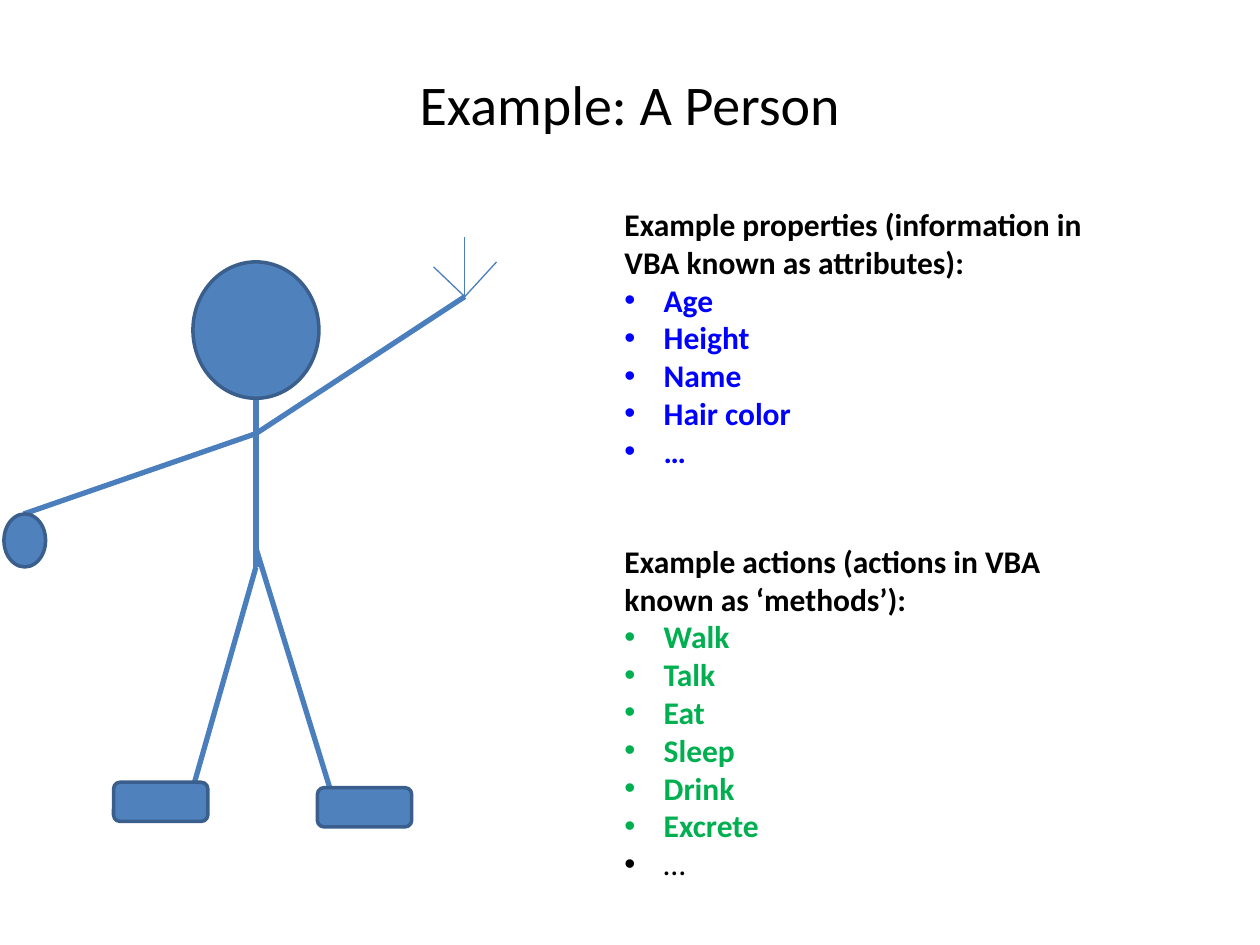
from lxml.etree import SubElement
from pptx import Presentation
from pptx.dml.color import RGBColor
from pptx.enum.shapes import MSO_CONNECTOR, MSO_SHAPE
from pptx.enum.text import MSO_ANCHOR, MSO_AUTO_SIZE, PP_ALIGN
from pptx.oxml.ns import qn
from pptx.util import Cm, Pt

BLACK = RGBColor(0x00, 0x00, 0x00)
BLUE = RGBColor(0x00, 0x00, 0xFF)
GREEN = RGBColor(0x00, 0xB0, 0x50)
SKIN = RGBColor(0x4F, 0x81, 0xBD)
EDGE = RGBColor(0x3A, 0x5F, 0x8C)
LIMB = RGBColor(0x4B, 0x7E, 0xBC)


def write(para, text, size=18, color=BLACK, bold=True, align=PP_ALIGN.LEFT, bullet=False):
    para.alignment = align
    run = para.add_run()
    run.text = text
    font = run.font
    font.name, font.size, font.bold = "Calibri", Pt(size), bold
    font.color.rgb = color
    if bullet:
        props = para._p.get_or_add_pPr()
        props.set("marL", str(Cm(0.79)))
        props.set("indent", str(-Cm(0.79)))
        SubElement(props, qn("a:buFont")).set("typeface", "Arial")
        SubElement(props, qn("a:buChar")).set("char", "•")


deck = Presentation()
deck.slide_width, deck.slide_height = Cm(25.4), Cm(19.05)
slide = deck.slides.add_slide(deck.slide_layouts[5])

title = slide.shapes.title
title.left, title.top, title.width, title.height = Cm(1.27), Cm(0.76), Cm(22.86), Cm(2.62)
title.text_frame.vertical_anchor = MSO_ANCHOR.MIDDLE
write(title.text_frame.paragraphs[0], "Example: A Person", size=32, bold=False,
      align=PP_ALIGN.CENTER)

# Stick figure: lines first, so that head, shoes and fist cover their ends
person = slide.shapes.add_group_shape()
neck, chest, hip = (5.16, 8.05), (5.16, 8.74), (5.16, 11.43)
palm, wrist = (9.37, 5.98), (0.48, 10.36)
lines = [
    (neck, hip, 3),
    (palm, chest, 3),
    (chest, wrist, 3),
    (hip, (3.89, 15.88), 3),
    ((5.16, 11.05), (6.73, 16.15), 3),
    (palm, (9.37, 4.78), 0.75),
    (palm, (10.01, 5.28), 0.75),
    (palm, (8.74, 5.38), 0.75),
]
for start, end, width in lines:
    line = person.shapes.add_connector(
        MSO_CONNECTOR.STRAIGHT, *[Cm(v) for v in start + end])
    line.line.color.rgb = LIMB
    line.line.width = Pt(width)
    SubElement(line._element.spPr, qn("a:effectLst"))

parts = [
    (MSO_SHAPE.OVAL, 3.89, 5.28, 2.54, 2.75),
    (MSO_SHAPE.ROUNDED_RECTANGLE, 2.29, 15.77, 1.9, 0.79),
    (MSO_SHAPE.ROUNDED_RECTANGLE, 6.4, 15.88, 1.9, 0.79),
    (MSO_SHAPE.OVAL, 0.08, 10.36, 0.84, 1.07),
]
for kind, *place in parts:
    part = person.shapes.add_shape(kind, *[Cm(v) for v in place])
    part.shadow.inherit = False
    part.fill.solid()
    part.fill.fore_color.rgb = SKIN
    part.line.color.rgb = EDGE
    part.line.width = Pt(2)

lists = [
    (4.01, 5.64, "Example properties (information in VBA known as attributes):",
     BLUE, ["Age", "Height", "Name", "Hair color", "…"], []),
    (10.8, 7.19, "Example actions (actions in VBA known as ‘methods’):",
     GREEN, ["Walk", "Talk", "Eat", "Sleep", "Drink", "Excrete"], ["…"]),
]
for top, height, head, color, items, plain in lists:
    box = slide.shapes.add_textbox(Cm(12.34), Cm(top), Cm(9.73), Cm(height))
    frame = box.text_frame
    frame.word_wrap = True
    frame.auto_size = MSO_AUTO_SIZE.SHAPE_TO_FIT_TEXT
    write(frame.paragraphs[0], head)
    for item in items:
        write(frame.add_paragraph(), item, color=color, bullet=True)
    for item in plain:
        write(frame.add_paragraph(), item, bold=False, bullet=True)

deck.save("out.pptx")
